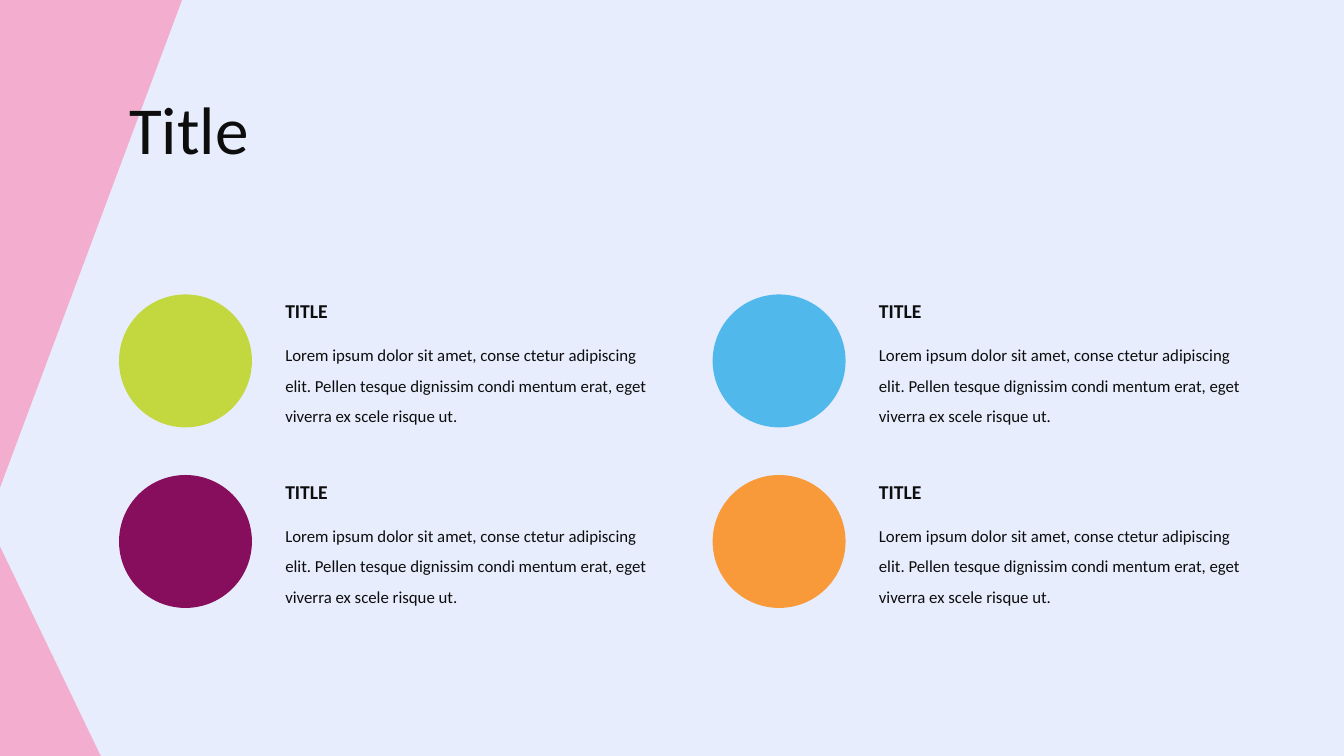
from pptx import Presentation
from pptx.dml.color import RGBColor
from pptx.enum import shapes, text
from pptx.util import Cm, Pt

BACKGROUND, PINK, INK = "E7EDFD", "F3AECF", "0D0D0D"
HEADING = "Title"
LABEL = "TITLE"
BODY = ("Lorem ipsum dolor sit amet, conse ctetur adipiscing elit. Pellen tesque "
        "dignissim condi mentum erat, eget viverra ex scele risque ut.")
ITEM_GRID = [
    [("C3D83F", LABEL, BODY), ("51B8EB", LABEL, BODY)],
    [("870E5D", LABEL, BODY), ("F89A3A", LABEL, BODY)],
]
LEFT, TOP = 3.0, 7.42
COLUMN_STEP, ROW_STEP = 14.96, 4.55
CIRCLE = 3.35
TEXT_OFFSET, BODY_OFFSET = 3.94, 0.9
TITLE_FORMAT = {"size": Pt(48), "bold": False}
LABEL_FORMAT = {"size": Pt(14), "bold": True}
BODY_FORMAT = {"size": Pt(12), "bold": False}


def paint(fill, color):
    fill.solid()
    fill.fore_color.rgb = RGBColor.from_string(color)


def add_figure(page, kind, place, color):
    figure = page.shapes.add_shape(kind, *map(Cm, place))
    figure.shadow.inherit = False
    paint(figure.fill, color)
    figure.line.fill.background()
    return figure


def write(box, words, font_format, spacing=1.0):
    frame = box.text_frame
    frame.word_wrap = True
    frame.auto_size = text.MSO_AUTO_SIZE.SHAPE_TO_FIT_TEXT
    frame.vertical_anchor = text.MSO_ANCHOR.TOP
    para = frame.paragraphs[0]
    para.alignment = text.PP_ALIGN.LEFT
    para.line_spacing = spacing
    span = para.add_run()
    span.text = words
    for name, value in {"name": "Calibri", **font_format}.items():
        setattr(span.font, name, value)
    span.font.color.rgb = RGBColor.from_string(INK)


def add_text(page, place, words, font_format, spacing=1.0):
    box = page.shapes.add_textbox(*map(Cm, place))
    write(box, words, font_format, spacing)


def add_title(page):
    title = page.shapes.title
    place = {"left": 3.0, "top": 2.08, "width": 8.36, "height": 2.31}
    for name, value in place.items():
        setattr(title, name, Cm(value))
    write(title, HEADING, TITLE_FORMAT)
    title._element.getparent().append(title._element)


def add_item(page, left, top, item):
    color, label, body = item
    text_left = left + TEXT_OFFSET
    add_figure(page, shapes.MSO_SHAPE.OVAL, (left, top, CIRCLE, CIRCLE), color)
    add_text(page, (text_left, top, 3.7, 0.86), label, LABEL_FORMAT)
    add_text(page, (text_left, top + BODY_OFFSET, 10.0, 2.57), body, BODY_FORMAT, 1.5)


def main():
    deck = Presentation()
    deck.slide_width, deck.slide_height = Cm(33.87), Cm(19.05)
    page = deck.slides.add_slide(deck.slide_layouts[5])
    paint(page.background.fill, BACKGROUND)

    triangle = shapes.MSO_SHAPE.RIGHT_TRIANGLE
    add_figure(page, triangle, (0, 13.77, 2.54, 5.28), PINK)
    upper = add_figure(page, triangle, (0, -0.03, 4.6, 12.32), PINK)
    upper.rotation = 180
    upper._element.spPr.xfrm.set("flipH", "1")

    add_title(page)
    for row, items in enumerate(ITEM_GRID):
        for column, item in enumerate(items):
            add_item(page, LEFT + column * COLUMN_STEP, TOP + row * ROW_STEP, item)
    deck.save("out.pptx")


if __name__ == "__main__":
    main()
